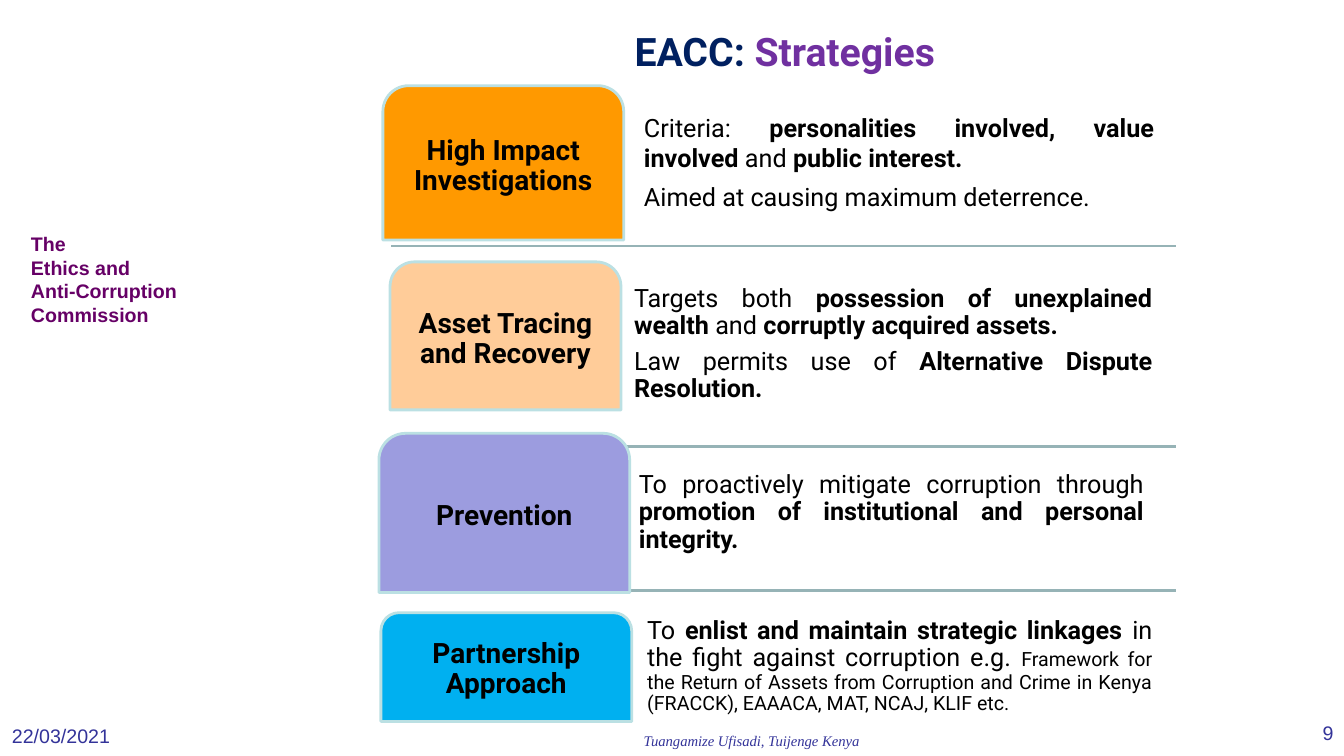
import pptx
import pptx.util
import pptx.dml.color
import pptx.enum.shapes
import pptx.enum.text
import pptx.oxml.ns
import lxml.etree

Cm = pptx.util.Cm
Pt = pptx.util.Pt
Align = pptx.enum.text.PP_ALIGN
Anchor = pptx.enum.text.MSO_ANCHOR


def colour(hex_code):
    return pptx.dml.color.RGBColor.from_string(hex_code)


def write(frame, paragraphs, align, font="Roboto", spacing=None, after=None, inset=None):
    """Fill a frame; each paragraph is a list of (text, size, hex colour, bold, italic) runs."""
    frame.word_wrap = True
    frame.auto_size = pptx.enum.text.MSO_AUTO_SIZE.NONE
    if inset is not None:
        frame.margin_left = frame.margin_right = inset
        frame.margin_top = frame.margin_bottom = inset
    for index, runs in enumerate(paragraphs):
        para = frame.add_paragraph() if index else frame.paragraphs[0]
        para.alignment = align
        para.line_spacing = spacing
        para.space_after = after
        for text, size, hex_code, bold, italic in runs:
            span = para.add_run()
            span.text = text
            span.font.name = font
            span.font.size = Pt(size)
            span.font.bold = bold
            span.font.italic = italic
            span.font.color.rgb = colour(hex_code)


deck = pptx.Presentation()
deck.slide_width = Cm(33.87)
deck.slide_height = Cm(19.05)
page = deck.slides.add_slide(deck.slide_layouts[5])

# Title
title = page.shapes.title
title.left, title.top, title.width, title.height = Cm(10.16), Cm(0.43), Cm(19.48), Cm(1.7)
title.text_frame.vertical_anchor = Anchor.MIDDLE
write(title.text_frame, [[("EACC:", 28, "002060", True, False),
                          (" Strategies ", 28, "7030A0", True, False)]], Align.CENTER)

# Commission name, date, page number and motto
commission = ["The", "Ethics and", "Anti-Corruption", "Commission"]
margin_texts = [
    ((0.53, 5.72, 6.1, 2.64), commission, 14, "660066", True, False, Align.LEFT, "Arial"),
    ((0.05, 18.11, 9.6, 0.94), ["22/03/2021"], 14, "333399", False, False, Align.LEFT, "Arial"),
    ((31.24, 18.03, 2.62, 0.94), ["9"], 14, "333399", False, False, Align.RIGHT, "Arial"),
    ((12.34, 18.31, 13.21, 0.74), ["Tuangamize Ufisadi, Tuijenge Kenya"], 10.5, "333399",
     False, True, Align.CENTER, "Times New Roman"),
]
for place, lines, size, hex_code, bold, italic, align, font in margin_texts:
    box = page.shapes.add_textbox(*map(Cm, place))
    write(box.text_frame, [[(line, size, hex_code, bold, italic)] for line in lines], align, font)

# Dividers
for height in (6.2, 11.25, 14.88):
    divider = page.shapes.add_connector(pptx.enum.shapes.MSO_CONNECTOR.STRAIGHT,
                                        Cm(9.86), Cm(height), Cm(29.64), Cm(height))
    divider.line.color.rgb = colour("96B3B6")
    divider.line.width = Pt(2)
    lxml.etree.SubElement(divider.element.spPr, pptx.oxml.ns.qn("a:effectLst"))

# Strategies: tab label, fill and place, then line spacing, place and (text, bold, size) runs
strategies = [
    ("High Impact Investigations", "FF9900", (9.65, 2.16, 6.07, 3.89),
     1.0, (16.13, 2.72, 13.06, 2.7),
     [[("Criteria: ", False, 18), ("personalities involved, value involved ", True, 18),
       ("and", False, 18), (" public interest. ", True, 18)],
      [("Aimed at causing maximum deterrence.", False, 18)]]),
    ("Asset Tracing and Recovery", "FFCC99", (9.83, 6.6, 5.82, 3.73),
     0.9, (15.88, 7.09, 13.26, 3.3),
     [[("Targets both ", False, 18), ("possession of unexplained wealth ", True, 18),
       ("and ", False, 18), ("corruptly acquired assets. ", True, 18)],
      [("Law permits use of ", False, 18), ("Alternative Dispute Resolution.", True, 18)]]),
    ("Prevention", "9C9CDF", (9.55, 10.92, 6.32, 4.01),
     0.9, (16, 11.79, 12.93, 2.3),
     [[("To proactively mitigate corruption through ", False, 18),
       ("promotion of institutional and personal integrity.", True, 18)]]),
    ("Partnership Approach", "00B0F0", (9.6, 15.44, 6.32, 2.74),
     0.9, (16.21, 15.47, 12.93, 2.65),
     [[("To ", False, 18), ("enlist and maintain strategic linkages ", True, 18),
       ("in the fight against corruption e.g. ", False, 18),
       ("Framework for the Return of Assets from Corruption and Crime in Kenya "
        "(FRACCK), EAAACA, MAT, NCAJ, KLIF etc.", False, 14)]]),
]
for label, fill, tab_place, spacing, detail_place, details in strategies:
    tab = page.shapes.add_shape(pptx.enum.shapes.MSO_SHAPE.ROUND_2_SAME_RECTANGLE,
                                *map(Cm, tab_place))
    tab.shadow.inherit = False
    tab.fill.solid()
    tab.fill.fore_color.rgb = colour(fill)
    tab.line.color.rgb = colour("BBE0E3")
    tab.line.width = Pt(2)
    tab.text_frame.vertical_anchor = Anchor.MIDDLE
    write(tab.text_frame, [[(label, 20, "000000", True, False)]], Align.CENTER,
          spacing=0.9, inset=Cm(0.1))

    detail = page.shapes.add_textbox(*map(Cm, detail_place))
    paragraphs = [[(text, size, "000000", bold, False) for text, bold, size in runs]
                  for runs in details]
    write(detail.text_frame, paragraphs, Align.JUSTIFY,
          spacing=spacing, after=Pt(6.3), inset=Cm(0.1))

deck.save("out.pptx")
